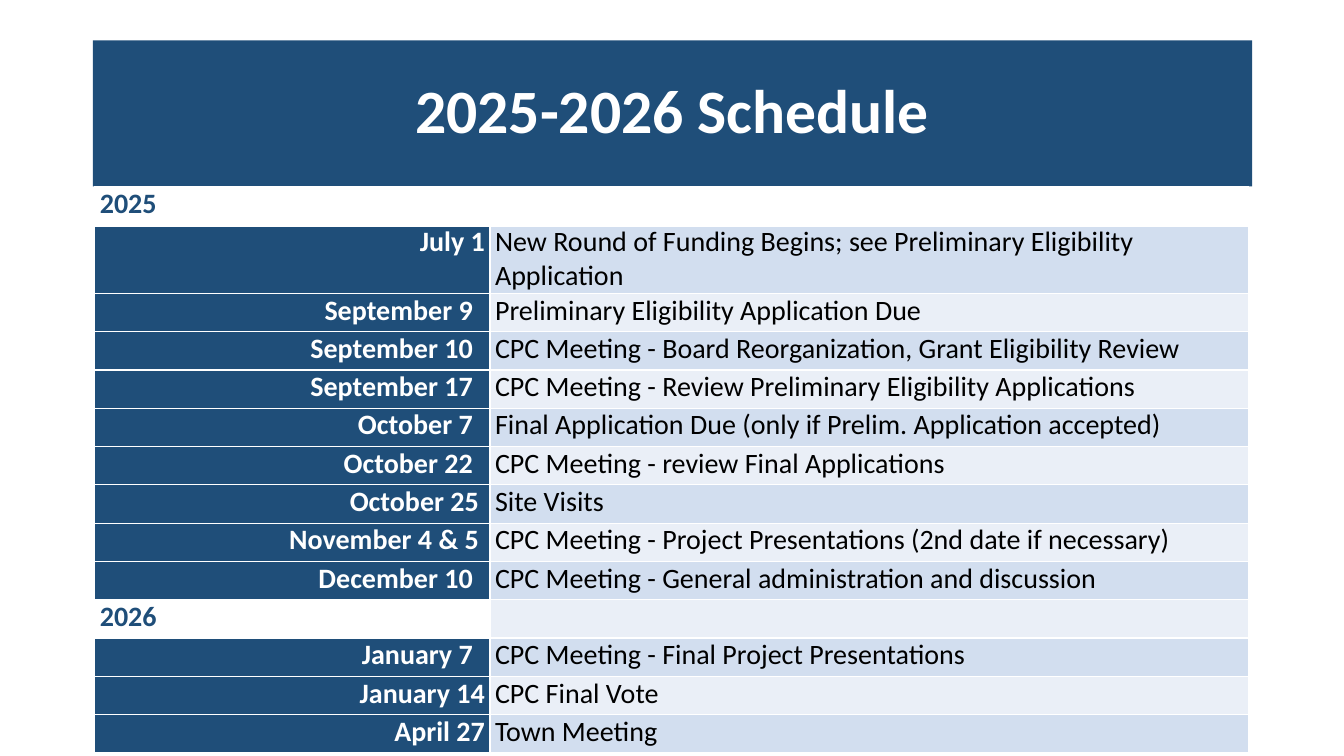
from lxml import etree
from pptx import Presentation
from pptx.dml.color import RGBColor
from pptx.enum import text
from pptx.oxml import ns
from pptx.util import Inches, Pt

# Content: date, space to its right in text spaces, event
HEADING = "2025-2026 Schedule"
SCHEDULE = [
    ("2025", 0, ""),
    ("July 1", 0, "New Round of Funding Begins; see Preliminary Eligibility Application"),
    ("September 9", 2, "Preliminary Eligibility Application Due"),
    ("September 10", 2, "CPC Meeting - Board Reorganization, Grant Eligibility Review"),
    ("September 17", 2, "CPC Meeting - Review Preliminary Eligibility Applications"),
    ("October 7", 2, "Final Application Due (only if Prelim. Application accepted)"),
    ("October 22", 2, "CPC Meeting - review Final Applications"),
    ("October 25", 1, "Site Visits"),
    ("November 4 & 5", 1, "CPC Meeting - Project Presentations (2nd date if necessary)"),
    ("December 10", 2, "CPC Meeting - General administration and discussion"),
    ("2026", 0, ""),
    ("January 7", 2, "CPC Meeting - Final Project Presentations"),
    ("January 14", 0, "CPC Final Vote"),
    ("April 27", 0, "Town Meeting"),
]
COLORS = {"navy": "1F4E79", "white": "FFFFFF", "black": "000000",
          "odd": "D2DEEF", "even": "EAEFF7"}
FONT = "Calibri"
COLUMN_WIDTHS = (3.92, 7.52)
ROW_HEIGHT, WRAPPED_HEIGHT = 0.38, 0.65
CELL_MARGIN, SPACE_WIDTH = 0.05, 0.06
ALIGN = text.PP_ALIGN


def rgb(name):
    return RGBColor.from_string(COLORS[name])


def write(paragraph, words, color, size, bold, align):
    paragraph.text = words
    paragraph.alignment = align
    paragraph.font.color.rgb = rgb(color)
    for key, value in {"name": FONT, "size": Pt(size), "bold": bold}.items():
        setattr(paragraph.font, key, value)
        for run in paragraph.runs:
            setattr(run.font, key, value)
    for run in paragraph.runs:
        run.font.color.rgb = rgb(color)


def add_borders(cell, widths):
    properties = cell._tc.get_or_add_tcPr()
    for side, width in widths.items():
        line = etree.SubElement(properties, ns.qn(f"a:ln{side}"), w=str(Pt(width)))
        fill = etree.SubElement(line, ns.qn("a:solidFill"))
        etree.SubElement(fill, ns.qn("a:srgbClr"), val=COLORS["white"])


def format_cell(cell, fill, margin_right, borders):
    margins = {"margin_left": CELL_MARGIN, "margin_right": margin_right,
               "margin_top": 0, "margin_bottom": 0}
    for key, value in margins.items():
        setattr(cell, key, Inches(value))
    add_borders(cell, borders)
    cell.fill.solid()
    cell.fill.fore_color.rgb = rgb(fill)


def add_heading(slide):
    heading = slide.shapes.title
    box = {"left": 0.92, "top": 0.4, "width": 11.5, "height": 1.45}
    for key, value in box.items():
        setattr(heading, key, Inches(value))
    heading.fill.solid()
    heading.fill.fore_color.rgb = rgb("navy")
    heading.text_frame.vertical_anchor = text.MSO_ANCHOR.MIDDLE
    line = heading.text_frame.paragraphs[0]
    write(line, HEADING, "white", 44, True, ALIGN.CENTER)
    line.line_spacing = 0.9


def add_schedule(slide):
    schedule = slide.shapes.add_table(
        len(SCHEDULE), 2, Inches(0.94), Inches(1.85),
        Inches(sum(COLUMN_WIDTHS)), Inches(5.59)).table
    for column, width in zip(schedule.columns, COLUMN_WIDTHS):
        column.width = Inches(width)

    for index, (date, spaces, event) in enumerate(SCHEDULE):
        is_year = not event
        schedule.rows[index].height = Inches(WRAPPED_HEIGHT if index == 1 else ROW_HEIGHT)
        # A thick rule separates the header from the first date
        borders = {"L": 1, "R": 1, "T": 3 if index == 1 else 1, "B": 3 if index == 0 else 1}
        date_cell, event_cell = schedule.cell(index, 0), schedule.cell(index, 1)
        band = "white" if index == 0 else "odd" if index % 2 else "even"

        format_cell(date_cell, "white" if is_year else "navy",
                    CELL_MARGIN + spaces * SPACE_WIDTH, borders)
        write(date_cell.text_frame.paragraphs[0], date, "navy" if is_year else "white",
              20, True, ALIGN.LEFT if is_year else ALIGN.RIGHT)
        format_cell(event_cell, band, CELL_MARGIN, borders)
        if event:
            write(event_cell.text_frame.paragraphs[0], event, "black", 20, False, ALIGN.LEFT)


def main():
    deck = Presentation()
    deck.slide_width, deck.slide_height = Inches(13.33), Inches(7.5)
    slide = deck.slides.add_slide(deck.slide_layouts[5])
    add_heading(slide)
    add_schedule(slide)
    deck.save("out.pptx")


if __name__ == "__main__":
    main()
